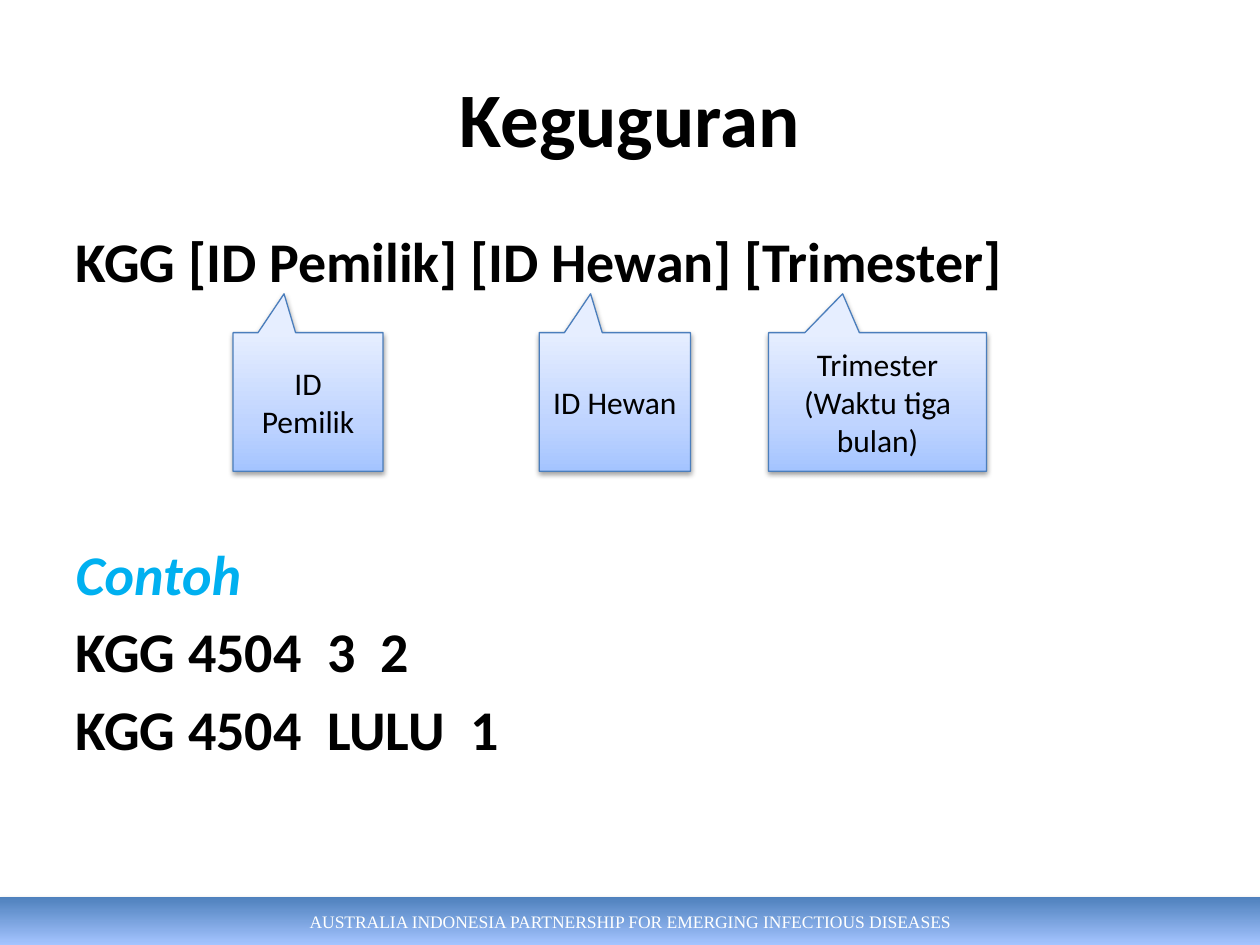
import pptx
import pptx.util
import pptx.dml.color
import pptx.enum.shapes
import pptx.enum.text
import pptx.oxml
import pptx.oxml.ns
from pptx.util import Inches

RGBColor = pptx.dml.color.RGBColor
Pt = pptx.util.Pt
MSO_SHAPE = pptx.enum.shapes.MSO_SHAPE
PP_ALIGN = pptx.enum.text.PP_ALIGN
MSO_ANCHOR = pptx.enum.text.MSO_ANCHOR

BLACK = RGBColor(0x00, 0x00, 0x00)
WHITE = RGBColor(0xFF, 0xFF, 0xFF)
CYAN = RGBColor(0x00, 0xB0, 0xF0)
BLUE = RGBColor(0x4F, 0x81, 0xBD)
OUTLINE = RGBColor(0x4B, 0x7E, 0xBC)
LIGHT = RGBColor(0xA4, 0xC4, 0xFF)
LIGHTER = RGBColor(0xBF, 0xD4, 0xFF)
PALE = RGBColor(0xE6, 0xEE, 0xFF)
NS = pptx.oxml.ns.nsdecls("a")


def paint(s, stops, angle, distance, alpha):
    """Give a shape a linear gradient and a soft shadow below it."""
    s.fill.gradient()
    s.fill.gradient_angle = angle
    gs_list = s.fill._fill._gradFill.find(pptx.oxml.ns.qn("a:gsLst"))
    gs_list.clear()
    for position, color in stops:
        gs_list.append(pptx.oxml.parse_xml(
            f'<a:gs {NS} pos="{position * 1000}"><a:srgbClr val="{color}"/></a:gs>'))
    s.shadow.inherit = False
    effects = s._element.spPr.find(pptx.oxml.ns.qn("a:effectLst"))
    effects.append(pptx.oxml.parse_xml(
        f'<a:outerShdw {NS} blurRad="{Pt(3.1)}" dist="{Pt(distance)}" dir="5400000" '
        f'rotWithShape="0"><a:srgbClr val="000000"><a:alpha val="{alpha * 1000}"/>'
        '</a:srgbClr></a:outerShdw>'))


def write(s, text, font, size, color):
    """Put centred text in the middle of a shape."""
    tf = s.text_frame
    tf.word_wrap = True
    tf.vertical_anchor = MSO_ANCHOR.MIDDLE
    tf.text = text
    p = tf.paragraphs[0]
    p.alignment = PP_ALIGN.CENTER
    r = p.runs[0]
    r.font.name, r.font.size = font, Pt(size)
    r.font.color.rgb = color


prs = pptx.Presentation()
prs.slide_width, prs.slide_height = Inches(10), Inches(7.5)
slide = prs.slides.add_slide(prs.slide_layouts[1])

# Footer band
band = slide.shapes.add_shape(MSO_SHAPE.RECTANGLE, 0, Inches(7.12), Inches(10), Inches(0.38))
paint(band, [(0, BLUE), (100, LIGHT)], 270, 1.8, 35)
band.line.fill.background()
write(band, "AUSTRALIA INDONESIA PARTNERSHIP FOR EMERGING INFECTIOUS DISEASES",
      "Times New Roman", 10, WHITE)

# Title
title = slide.shapes.title
title.left, title.top, title.width, title.height = Inches(0.5), Inches(0.3), Inches(9), Inches(1.25)
write(title, "Keguguran", "Calibri", 44, BLACK)
title.text_frame.paragraphs[0].runs[0].font.bold = True

# Message format and examples; the wide gap leaves room for the callouts
body = slide.placeholders[1]
body.left, body.top, body.width, body.height = Inches(0.5), Inches(1.75), Inches(9), Inches(4.95)
tf = body.text_frame
tf.auto_size = pptx.enum.text.MSO_AUTO_SIZE.NONE
lines = [
    ("KGG [ID Pemilik] [ID Hewan] [Trimester]", 0, BLACK, False),
    ("Contoh", 140, CYAN, True),
    ("KGG 4504  3  2", 6, BLACK, False),
    ("KGG 4504  LULU  1", 6, BLACK, False),
]
tf.text = "\n".join(line[0] for line in lines)
for p, (text, gap, color, italic) in zip(tf.paragraphs, lines):
    pPr = p._p.get_or_add_pPr()
    pPr.set("marL", "0")
    pPr.set("indent", "0")
    pPr.append(pptx.oxml.parse_xml(f"<a:buNone {NS}/>"))
    p.space_before = Pt(gap)
    r = p.runs[0]
    r.font.name, r.font.size = "Calibri", Pt(32)
    r.font.bold, r.font.italic = True, italic
    r.font.color.rgb = color

# Callouts under the three fields
for text, left, width in [
    ("ID Pemilik", 1.85, 1.19),
    ("ID Hewan", 4.28, 1.2),
    ("Trimester (Waktu tiga bulan)", 6.1, 1.73),
]:
    s = slide.shapes.add_shape(MSO_SHAPE.RECTANGULAR_CALLOUT,
                               Inches(left), Inches(2.64), Inches(width), Inches(1.1))
    s.adjustments[0], s.adjustments[1] = -0.16, -0.78
    paint(s, [(0, LIGHT), (35, LIGHTER), (100, PALE)], 90, 1.6, 38)
    s.line.color.rgb = OUTLINE
    s.line.width = Pt(0.75)
    write(s, text, "Calibri", 18, BLACK)

prs.save("out.pptx")
